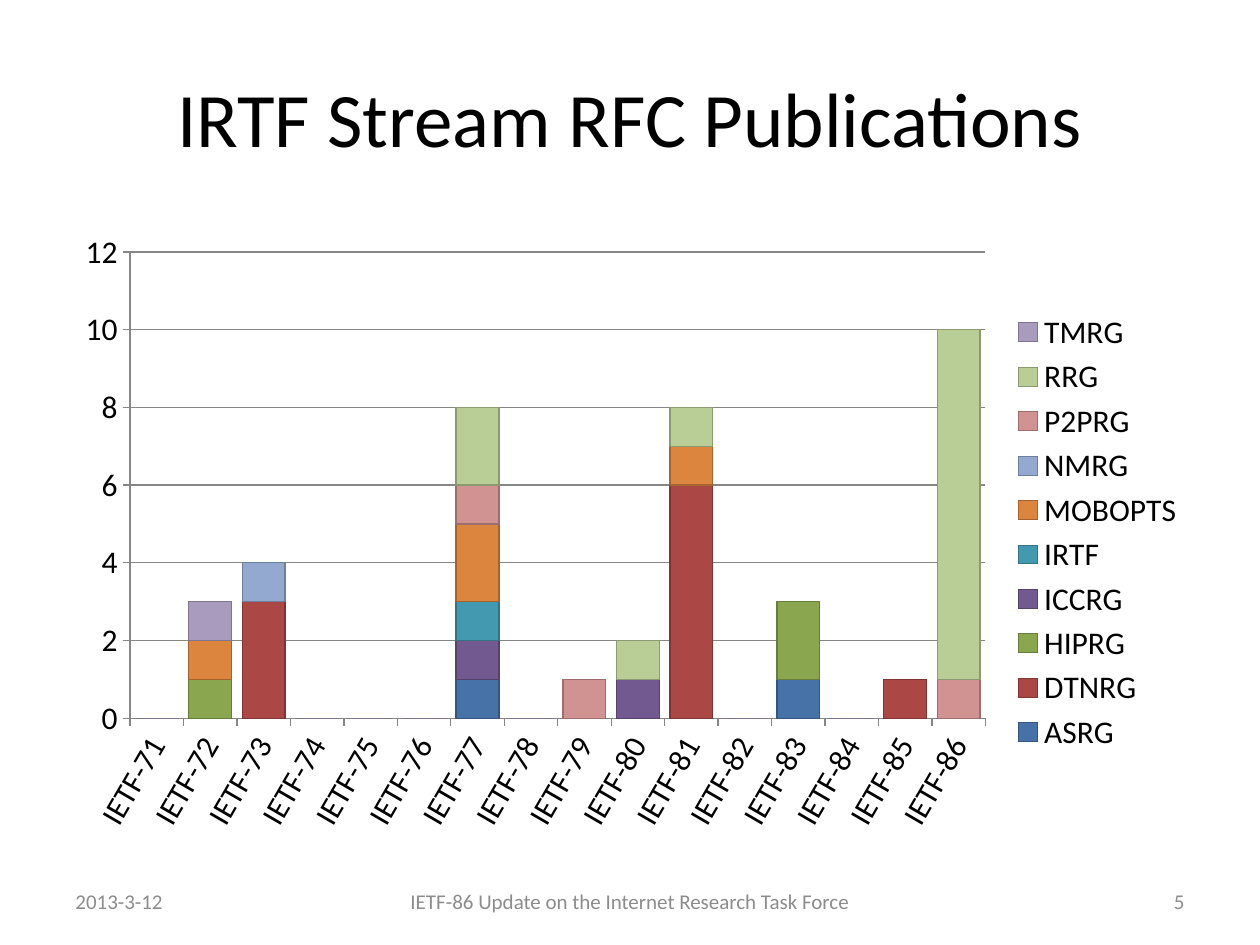
import pptx
import pptx.chart.data
import pptx.dml.color
import pptx.enum.chart
import pptx.enum.text
import pptx.util

Pt = pptx.util.Pt
ALIGN = pptx.enum.text.PP_ALIGN
FONT = "Calibri"

COLORS = {
    "text": "000000", "footer": "8C8C8C", "axis": "868686",
    "ASRG": "4672A8", "DTNRG": "AB4744", "HIPRG": "8AA64F",
    "ICCRG": "725990", "IRTF": "4299B0", "MOBOPTS": "DC853E",
    "NMRG": "93A9CF", "P2PRG": "D19392", "RRG": "B9CD96",
    "TMRG": "A99BBD",
}

# Publications per research group, keyed by IETF meeting number
MEETINGS = range(71, 87)
PUBLICATIONS = {
    "ASRG": {77: 1, 83: 1},
    "DTNRG": {73: 3, 81: 6, 85: 1},
    "HIPRG": {72: 1, 83: 2},
    "ICCRG": {77: 1, 80: 1},
    "IRTF": {77: 1},
    "MOBOPTS": {72: 1, 77: 2, 81: 1},
    "NMRG": {73: 1},
    "P2PRG": {77: 1, 79: 1, 86: 1},
    "RRG": {77: 2, 80: 1, 81: 1, 86: 9},
    "TMRG": {72: 1},
}


def set_attributes(target, values):
    for name, value in values.items():
        setattr(target, name, value)


def color(name, brightness=1):
    red, green, blue = pptx.dml.color.RGBColor.from_string(COLORS[name])
    return pptx.dml.color.RGBColor(
        *(round(part * brightness) for part in (red, green, blue)))


class SlideBuilder:
    """Holds the style and the current slide."""

    def __init__(self, slide):
        self.slide = slide

    def style_font(self, font, size, color_name):
        set_attributes(font, {"name": FONT, "size": Pt(size)})
        font.color.rgb = color(color_name)

    def style_line(self, line, color_name, brightness=1):
        line.color.rgb = color(color_name, brightness)
        line.width = Pt(0.75)

    def add_text(self, text, box, size, color_name, alignment):
        shape = self.slide.shapes.add_textbox(*map(Pt, box))
        set_attributes(shape.text_frame, {
            "word_wrap": True,
            "vertical_anchor": pptx.enum.text.MSO_ANCHOR.MIDDLE,
        })
        paragraph = shape.text_frame.paragraphs[0]
        set_attributes(paragraph, {"text": text, "alignment": alignment})
        self.style_font(paragraph.runs[0].font, size, color_name)

    def add_stacked_chart(self, categories, series_values, box):
        data = pptx.chart.data.CategoryChartData()
        data.categories = categories
        for name, values in series_values.items():
            data.add_series(name, values)
        chart = self.slide.shapes.add_chart(
            pptx.enum.chart.XL_CHART_TYPE.COLUMN_STACKED,
            *map(Pt, box), data).chart
        self.style_font(chart.font, 18, "text")

        # Columns
        plot = chart.plots[0]
        set_attributes(plot, {
            "gap_width": 25, "overlap": 100, "vary_by_categories": False})
        for series in plot.series:
            series.format.fill.solid()
            series.format.fill.fore_color.rgb = color(series.name)
            self.style_line(series.format.line, series.name, 0.75)

        # Axes
        set_attributes(chart.value_axis, {
            "minimum_scale": 0, "maximum_scale": 12, "major_unit": 2,
            "has_major_gridlines": True})
        self.style_line(chart.value_axis.major_gridlines.format.line, "axis")
        for axis in (chart.category_axis, chart.value_axis):
            axis.major_tick_mark = pptx.enum.chart.XL_TICK_MARK.OUTSIDE
            self.style_line(axis.format.line, "axis")
            self.style_font(axis.tick_labels.font, 18, "text")
        for body in chart.element.xpath(".//c:catAx/c:txPr/a:bodyPr"):
            body.set("rot", "-3600000")  # labels slanted by 60 degrees

        # Legend
        chart.has_title = False
        chart.has_legend = True
        set_attributes(chart.legend, {
            "position": pptx.enum.chart.XL_LEGEND_POSITION.RIGHT,
            "include_in_layout": False})
        self.style_font(chart.legend.font, 18, "text")


def main():
    presentation = pptx.Presentation()
    set_attributes(presentation, {
        "slide_width": Pt(720), "slide_height": Pt(540)})
    builder = SlideBuilder(
        presentation.slides.add_slide(presentation.slide_layouts[6]))

    # Title
    builder.add_text("IRTF Stream RFC Publications", (36, 21.6, 648, 90),
                     44, "text", ALIGN.CENTER)

    # Chart
    builder.add_stacked_chart(
        [f"IETF-{meeting}" for meeting in MEETINGS],
        {group: [counts.get(meeting, 0) for meeting in MEETINGS]
         for group, counts in PUBLICATIONS.items()},
        (36, 126, 648, 356.4))

    # Footer
    for text, left, width, alignment in (
        ("2013-3-12", 36, 168, ALIGN.LEFT),
        ("IETF-86 Update on the Internet Research Task Force",
         204, 312, ALIGN.CENTER),
        ("5", 516, 168, ALIGN.RIGHT),
    ):
        builder.add_text(text, (left, 500.5, width, 28.75),
                         12, "footer", alignment)

    presentation.save("out.pptx")


if __name__ == "__main__":
    main()
